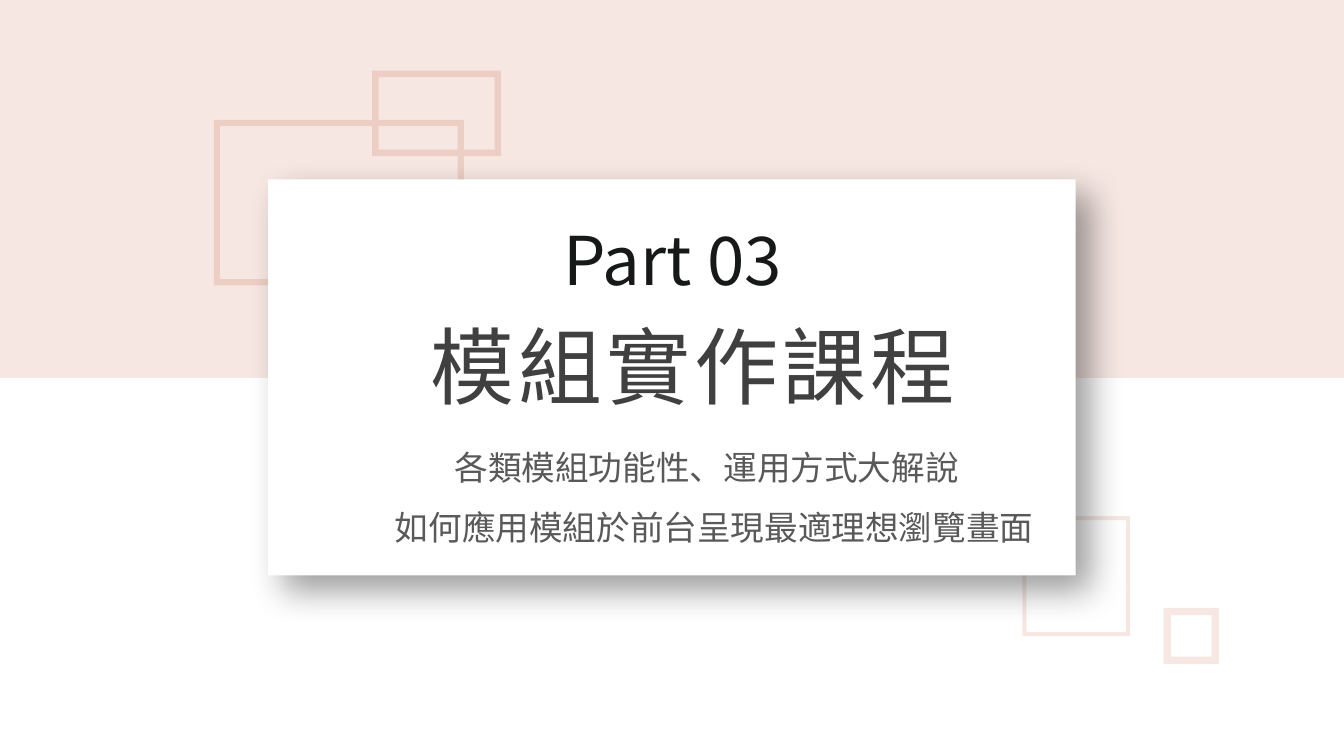
from dataclasses import dataclass

from pptx import Presentation
from pptx.dml.color import RGBColor
from pptx.enum.shapes import MSO_SHAPE as Shape
from pptx.enum.text import MSO_AUTO_SIZE as AutoSize, PP_ALIGN as Align
from pptx.oxml import parse_xml
from pptx.oxml.ns import nsdecls, qn
from pptx.util import Inches, Pt

FONT = "Noto Sans CJK SC"
BLUSH = "F6E7E2"
ROSE = "ECCEC4"
WHITE = "FFFFFF"


@dataclass
class Box:
    left: float
    top: float
    width: float
    height: float
    color: str
    frame: float | None = None  # border thickness as a share of the shorter side
    shadow: bool = False


@dataclass
class Caption:
    left: float
    top: float
    width: float
    height: float
    lines: list[str]
    size: int
    color: str
    line_spacing: float = 1.0
    letter_spacing: int = 0  # points


BOXES = [
    Box(0, 0, 13.33, 3.75, BLUSH),
    Box(10.14, 5.12, 1.07, 1.19, BLUSH, frame=0.037),
    Box(2.12, 1.19, 2.48, 1.64, ROSE, frame=0.037),
    Box(2.66, 1.78, 8.01, 3.93, WHITE, shadow=True),
    Box(11.54, 6.03, 0.55, 0.56, BLUSH, frame=0.134),
    Box(3.69, 0.7, 1.28, 0.85, ROSE, frame=0.076),
]

CAPTIONS = [
    Caption(4.98, 2.12, 3.38, 0.91, ["Part 03"], 48, "171919"),
    Caption(3.55, 4.18, 6.99, 1.24,
            ["各類模組功能性、運用方式大解說 ", " 如何應用模組於前台呈現最適理想瀏覽畫面"],
            24, "595959", line_spacing=1.5),
    Caption(3.11, 3.07, 7.52, 1.11, ["模組實作課程"], 60, "404040", letter_spacing=3),
]


def rgb(color: str) -> RGBColor:
    return RGBColor.from_string(color)


def add_card_shadow(shape) -> None:
    """Replace the shape's empty effect list with a soft shadow to the lower right."""
    properties = shape._element.spPr
    properties.remove(properties.find(qn("a:effectLst")))
    properties.append(parse_xml(
        f'<a:effectLst {nsdecls("a")}>'
        f'<a:outerShdw blurRad="{Pt(25)}" dist="{Pt(15)}" dir="{45 * 60000}" '
        'algn="tl" rotWithShape="0">'
        '<a:srgbClr val="000000"><a:alpha val="38000"/></a:srgbClr>'
        '</a:outerShdw></a:effectLst>'))


def draw_box(slide, box: Box) -> None:
    kind = Shape.RECTANGLE if box.frame is None else Shape.FRAME
    shape = slide.shapes.add_shape(kind, Inches(box.left), Inches(box.top),
                                   Inches(box.width), Inches(box.height))
    if box.frame is not None:
        shape.adjustments[0] = box.frame
    shape.fill.solid()
    shape.fill.fore_color.rgb = rgb(box.color)
    shape.line.fill.background()
    shape.shadow.inherit = False
    if box.shadow:
        add_card_shadow(shape)


def draw_caption(slide, caption: Caption) -> None:
    text_box = slide.shapes.add_textbox(Inches(caption.left), Inches(caption.top),
                                        Inches(caption.width), Inches(caption.height))
    frame = text_box.text_frame
    frame.word_wrap = True
    frame.auto_size = AutoSize.SHAPE_TO_FIT_TEXT
    for index, line in enumerate(caption.lines):
        paragraph = frame.add_paragraph() if index else frame.paragraphs[0]
        paragraph.alignment = Align.CENTER
        paragraph.line_spacing = caption.line_spacing
        run = paragraph.add_run()
        run.text = line
        run.font.size = Pt(caption.size)
        run.font.color.rgb = rgb(caption.color)
        run.font.name = FONT
        properties = run._r.get_or_add_rPr()
        properties.append(parse_xml(f'<a:ea {nsdecls("a")} typeface="{FONT}"/>'))
        if caption.letter_spacing:
            properties.set("spc", str(caption.letter_spacing * 100))


def main() -> None:
    presentation = Presentation()
    presentation.slide_width = Inches(13.33)
    presentation.slide_height = Inches(7.5)
    slide = presentation.slides.add_slide(presentation.slide_layouts[6])
    for box in BOXES:
        draw_box(slide, box)
    for caption in CAPTIONS:
        draw_caption(slide, caption)
    presentation.save("out.pptx")


if __name__ == "__main__":
    main()
